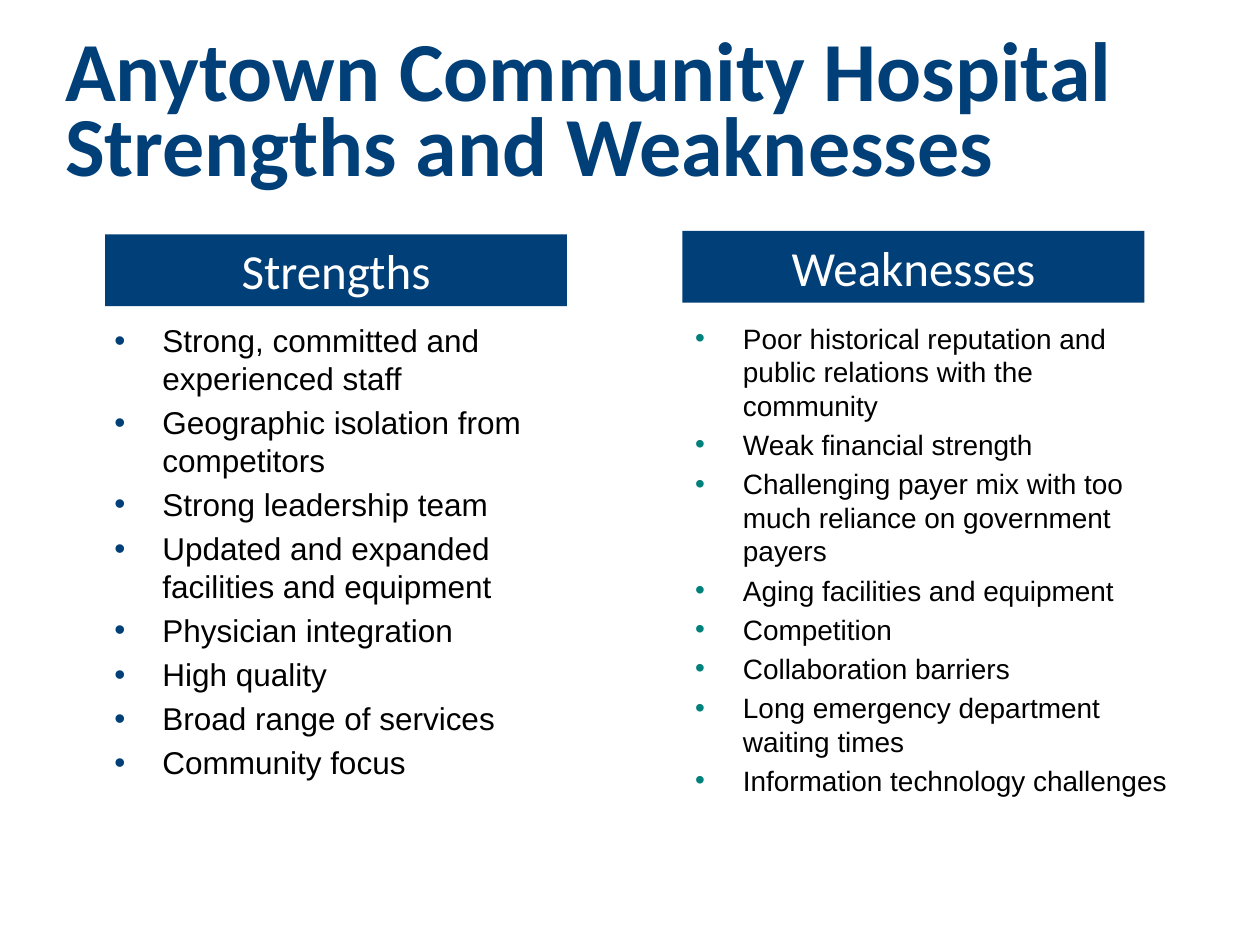
from lxml import etree
from pptx import Presentation
from pptx import util as u
from pptx.dml.color import RGBColor
from pptx.enum import shapes, text
from pptx.oxml.ns import qn

COLORS = {"navy": "003F77", "teal": "00817C", "black": "000000", "white": "FFFFFF"}

presentation = Presentation()
presentation.slide_width = u.Inches(10)
presentation.slide_height = u.Inches(7.5)
slide = presentation.slides.add_slide(presentation.slide_layouts[3])

# Grid of 12 columns and 30 rows
COLUMN = presentation.slide_width / 12
ROW = presentation.slide_height / 30


def place(shape, left, top, width, height):
    shape.left, shape.width = int(left * COLUMN), int(width * COLUMN)
    shape.top, shape.height = int(top * ROW), int(height * ROW)


def add_run(paragraph, words, font_name, size, color, bold=False):
    run = paragraph.add_run()
    run.text = words
    run.font.name = font_name
    run.font.size = u.Pt(size)
    run.font.bold = bold
    run.font.color.rgb = RGBColor.from_string(COLORS[color])


# Title
title = slide.shapes.title
place(title, 0.5, 1.2, 11, 5)
title.text_frame.auto_size = text.MSO_AUTO_SIZE.NONE
title.text_frame.vertical_anchor = text.MSO_ANCHOR.MIDDLE
paragraph = title.text_frame.paragraphs[0]
paragraph.alignment = text.PP_ALIGN.LEFT
paragraph.line_spacing = 0.75
add_run(paragraph, "Anytown Community Hospital Strengths and Weaknesses",
        "Calibri", 48, "navy", bold=True)

# Heading, heading left and top, list left, width and height, size, bullet, items
sides = [
    ("Strengths", 1, 7.44, 0.97, 4.63, 15.44, 18, "navy", [
        "Strong, committed and experienced staff",
        "Geographic isolation from competitors",
        "Strong leadership team",
        "Updated and expanded facilities and equipment",
        "Physician integration",
        "High quality",
        "Broad range of services",
        "Community focus",
    ]),
    ("Weaknesses", 6.5, 7.33, 6.5, 4.8, 16.52, 16, "teal", [
        "Poor historical reputation and public relations with the community",
        "Weak financial strength",
        "Challenging payer mix with too much reliance on government payers",
        "Aging facilities and equipment",
        "Competition",
        "Collaboration barriers",
        "Long emergency department waiting times",
        "Information technology challenges",
    ]),
]

for index, side in enumerate(sides, start=1):
    heading, left, top, list_left, width, height, size, bullet, items = side

    # Bulleted list
    body = slide.placeholders[index]
    place(body, list_left, 10, width, height)
    frame = body.text_frame
    frame.auto_size = text.MSO_AUTO_SIZE.NONE
    for number, item in enumerate(items):
        paragraph = frame.add_paragraph() if number else frame.paragraphs[0]
        paragraph.space_before = u.Pt(0.2 * size if number else 0)
        properties = paragraph._p.get_or_add_pPr()
        properties.set("marL", str(u.Inches(0.38)))
        properties.set("indent", str(-u.Inches(0.38)))
        bullet_color = etree.SubElement(properties, qn("a:buClr"))
        etree.SubElement(bullet_color, qn("a:srgbClr"), val=COLORS[bullet])
        etree.SubElement(properties, qn("a:buFont"), typeface="Arial")
        etree.SubElement(properties, qn("a:buChar"), char="•")
        add_run(paragraph, item, "Arial", size, "black")

    # Heading bar
    bar = slide.shapes.add_shape(shapes.MSO_SHAPE.RECTANGLE, 0, 0, 0, 0)
    place(bar, left, top, 4.4, 2.28)
    bar.shadow.inherit = False
    bar.fill.solid()
    bar.fill.fore_color.rgb = RGBColor.from_string(COLORS["navy"])
    bar.line.fill.background()
    bar.text_frame.vertical_anchor = text.MSO_ANCHOR.TOP
    bar.text_frame.auto_size = text.MSO_AUTO_SIZE.SHAPE_TO_FIT_TEXT
    paragraph = bar.text_frame.paragraphs[0]
    paragraph.alignment = text.PP_ALIGN.CENTER
    add_run(paragraph, heading, "Calibri", 28, "white")

presentation.save("out.pptx")
